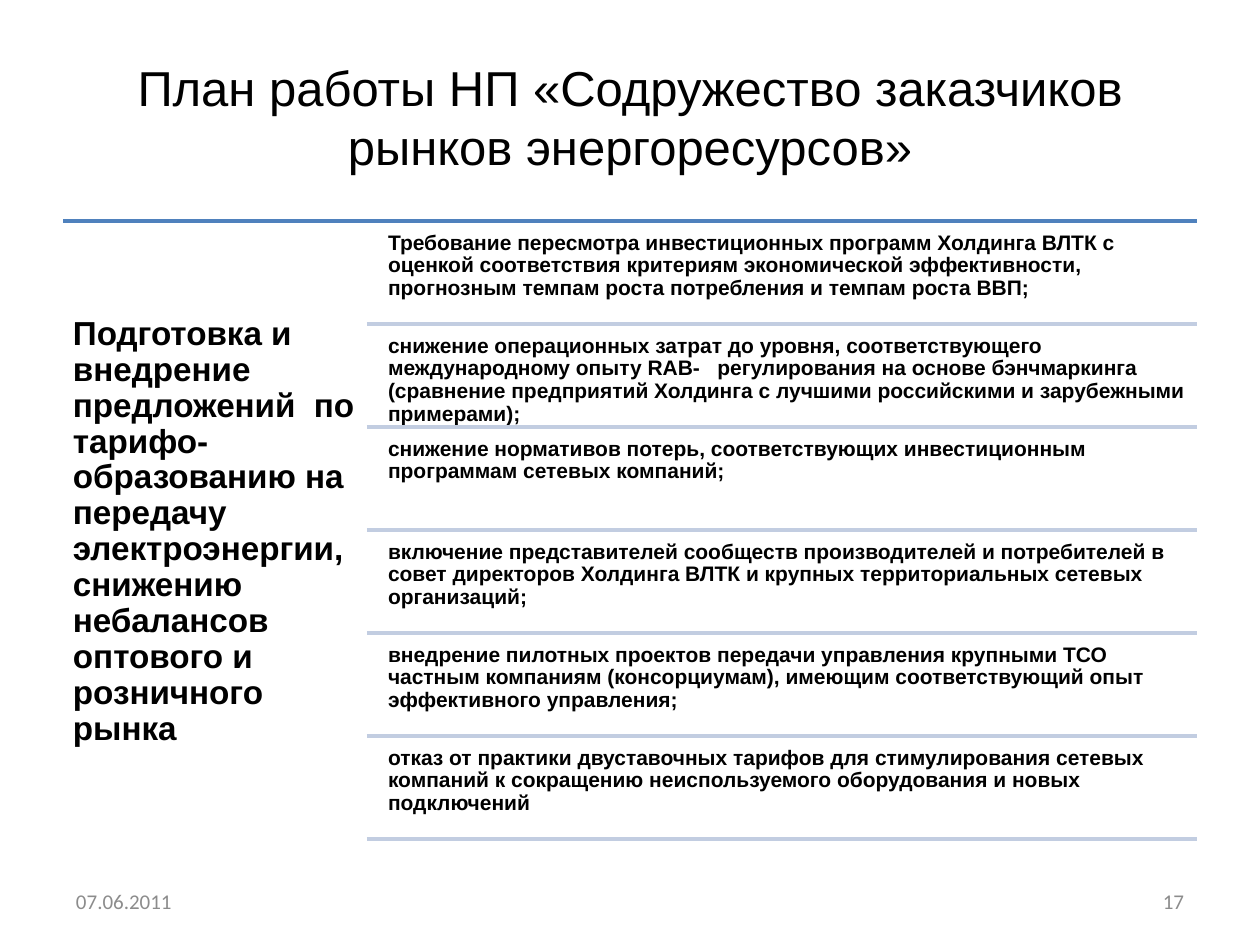
"""Builds the work plan slide: one topic on the left, six ruled measures on the right."""
from dataclasses import dataclass

import lxml.etree
import pptx
import pptx.dml.color
import pptx.enum.shapes
import pptx.enum.text
import pptx.oxml.ns
import pptx.util

ALIGN = pptx.enum.text.PP_ALIGN
ANCHOR = pptx.enum.text.MSO_ANCHOR
PX_PER_INCH = 126


@dataclass(frozen=True)
class Theme:
    ink: str = "000000"
    muted: str = "8C8C8C"
    accent: str = "4F81BD"
    rule: str = "C2CDE1"
    body_font: str = "Arial"
    footer_font: str = "Calibri"
    title_size: int = 28
    topic_size: int = 19
    small_size: int = 12
    rule_width: int = 2


def px(length):
    return pptx.util.Emu(round(length * 914400 / PX_PER_INCH))


def rgb(value):
    return pptx.dml.color.RGBColor.from_string(value)


class Page:
    def __init__(self, slide, theme):
        self.slide = slide
        self.theme = theme

    def text(self, area, words, size, bold=False, color=None, font=None,
             align=ALIGN.LEFT, anchor=ANCHOR.MIDDLE, inset=(13, 6), spacing=1.0):
        box = self.slide.shapes.add_textbox(*map(px, area))
        frame = box.text_frame
        frame.word_wrap = True
        frame.vertical_anchor = anchor
        frame.margin_left = frame.margin_right = px(inset[0])
        frame.margin_top = frame.margin_bottom = px(inset[1])
        para = frame.paragraphs[0]
        para.alignment = align
        para.line_spacing = spacing
        span = para.add_run()
        span.text = words
        span.font.name = font or self.theme.body_font
        span.font.size = pptx.util.Pt(size)
        span.font.bold = bold
        span.font.color.rgb = rgb(color or self.theme.ink)

    def rule(self, left, right, y, color):
        line = self.slide.shapes.add_connector(
            pptx.enum.shapes.MSO_CONNECTOR.STRAIGHT, px(left), px(y), px(right), px(y))
        line.line.color.rgb = rgb(color)
        line.line.width = pptx.util.Pt(self.theme.rule_width)
        lxml.etree.SubElement(line._element.spPr, pptx.oxml.ns.qn("a:effectLst"))

    def footer(self, left, words, align):
        self.text((left, 876, 294, 50), words, self.theme.small_size,
                  color=self.theme.muted, font=self.theme.footer_font, align=align)


TITLE = "План работы НП «Содружество заказчиков рынков энергоресурсов»"
TOPIC = ("Подготовка и внедрение предложений  по тарифо-образованию на передачу "
         "электроэнергии, снижению небалансов оптового и розничного рынка")
MEASURES = [
    "Требование пересмотра инвестиционных программ Холдинга ВЛТК с оценкой "
    "соответствия критериям экономической эффективности, прогнозным темпам роста "
    "потребления и темпам роста ВВП;",
    "снижение операционных затрат до уровня, соответствующего международному опыту "
    "RAB-   регулирования на основе бэнчмаркинга (сравнение предприятий Холдинга с "
    "лучшими российскими и зарубежными примерами);",
    "снижение нормативов потерь, соответствующих инвестиционным программам сетевых "
    "компаний;",
    "включение представителей сообществ производителей и потребителей в совет "
    "директоров Холдинга ВЛТК и крупных территориальных сетевых организаций;",
    "внедрение пилотных проектов передачи управления крупными ТСО частным компаниям "
    "(консорциумам), имеющим соответствующий опыт эффективного управления;",
    "отказ от практики двуставочных тарифов для стимулирования сетевых компаний к "
    "сокращению неиспользуемого оборудования и новых подключений",
]
LEFT, RIGHT, TOP = 63, 1197, 221
COLUMN, PITCH = 367, 103


def main():
    theme = Theme()
    deck = pptx.Presentation()
    deck.slide_width, deck.slide_height = px(1260), px(945)
    page = Page(deck.slides.add_slide(deck.slide_layouts[6]), theme)

    page.text((LEFT, 38, RIGHT - LEFT, 157), TITLE, theme.title_size,
              align=ALIGN.CENTER)
    page.rule(LEFT, RIGHT, TOP, theme.accent)
    page.text((LEFT, TOP, COLUMN - LEFT, 622), TOPIC, theme.topic_size,
              bold=True, inset=(10, 10), spacing=0.9)
    for row, measure in enumerate(MEASURES):
        y = TOP + row * PITCH
        page.text((382, y + 5, 814, PITCH - 5), measure, theme.small_size,
                  bold=True, anchor=ANCHOR.TOP, inset=(6, 6), spacing=0.9)
        page.rule(COLUMN, RIGHT, y + PITCH, theme.rule)
    page.footer(LEFT, "07.06.2011", ALIGN.LEFT)
    page.footer(RIGHT - 294, "17", ALIGN.RIGHT)
    deck.save("out.pptx")


if __name__ == "__main__":
    main()
